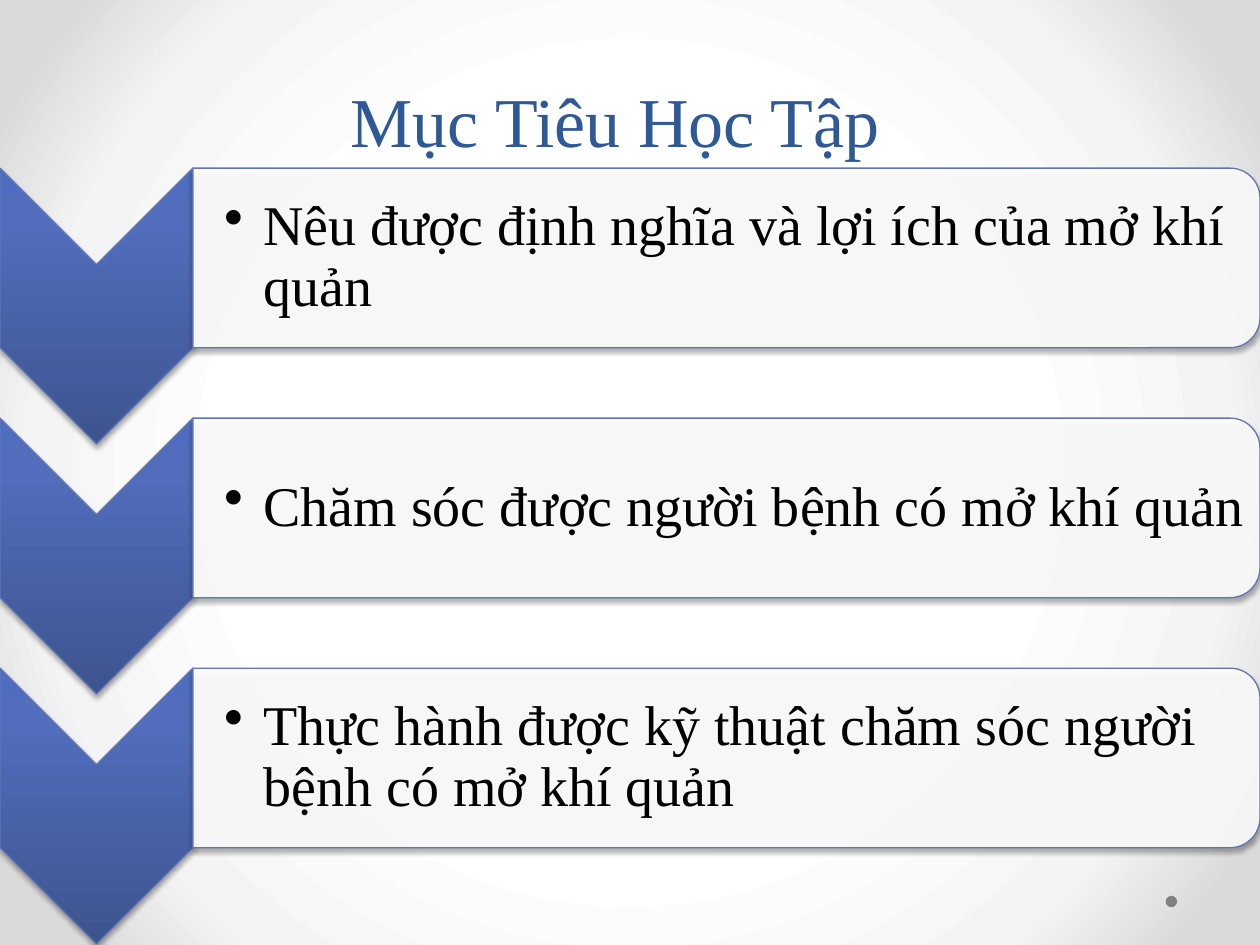
from dataclasses import dataclass
from typing import Any

from lxml.etree import SubElement
from pptx import Presentation
from pptx.dml.color import RGBColor
from pptx.enum.shapes import MSO_SHAPE as Preset
from pptx.enum.text import MSO_ANCHOR as Anchor, MSO_AUTO_SIZE as AutoSize, PP_ALIGN as Align
from pptx.oxml import parse_xml
from pptx.oxml.ns import nsdecls, qn
from pptx.util import Cm, Pt


@dataclass(frozen=True)
class Theme:
    font: str = "Times New Roman"
    title_size: float = 40
    title_leading: float = 58
    body_size: float = 32
    title: str = "2F5897"
    body: str = "000000"
    outline: str = "6076B4"
    panel: str = "FFFFFF"
    dot: str = "808080"
    chevron: tuple = ((0, "3E5490"), (80, "516DBB"), (100, "4F6CBE"))
    backdrop: tuple = ((50, "FFFFFF"), (76, "F4F4F4"), (92, "DADADA"))


@dataclass(frozen=True)
class Box:
    left: float
    top: float
    width: float
    height: float

    def lengths(self) -> tuple:
        return tuple(map(Cm, (self.left, self.top, self.width, self.height)))

    def turned(self) -> "Box":
        shift = (self.width - self.height) / 2
        return Box(self.left + shift, self.top - shift, self.height, self.width)


@dataclass(frozen=True)
class Objective:
    text: str
    top: float


THEME = Theme()
FIRST_TOP, PITCH = 3.39, 5.04
CHEVRON_WIDTH, CHEVRON_HEIGHT = 3.89, 5.56
PANEL_WIDTH, PANEL_HEIGHT = 21.51, 3.62
TEXT_WIDTH, TEXT_HEIGHT = 21.34, 3.28
TEXTS = (
    "Nêu được định nghĩa và lợi ích của mở khí quản",
    "Chăm sóc được người bệnh có mở khí quản",
    "Thực hành được kỹ thuật chăm sóc người bệnh có mở khí quản",
)
LINEAR = '<a:lin ang="16200000" scaled="0"/>'
CIRCLE = '<a:path path="circle"><a:fillToRect l="50000" t="50000" r="50000" b="50000"/></a:path>'


def apply(target: Any, values: dict) -> None:
    for name, value in values.items():
        setattr(target, name, value)


def style_font(paragraph: Any, size: float, color: str) -> None:
    apply(paragraph.font, {"name": THEME.font, "size": Pt(size)})
    paragraph.font.color.rgb = RGBColor.from_string(color)


def set_gradient(properties: Any, stops: tuple, direction: str) -> None:
    stop_list = "".join(
        f'<a:gs pos="{position * 1000}"><a:srgbClr val="{color}"/></a:gs>' for position, color in stops
    )
    gradient = parse_xml(
        f'<a:gradFill {nsdecls("a")} rotWithShape="0"><a:gsLst>{stop_list}</a:gsLst>{direction}</a:gradFill>'
    )
    properties.replace(properties.find(qn("a:solidFill")), gradient)


def add_filled(slide: Any, preset: Preset, box: Box, color: str) -> Any:
    shape = slide.shapes.add_shape(preset, *box.lengths())
    shape.shadow.inherit = False
    shape.fill.solid()
    shape.fill.fore_color.rgb = RGBColor.from_string(color)
    shape.line.fill.background()
    return shape


def add_turned(slide: Any, preset: Preset, box: Box) -> Any:
    shape = add_filled(slide, preset, box.turned(), THEME.panel)
    shape.rotation = 90
    shape.line.color.rgb = RGBColor.from_string(THEME.outline)
    shape.line.width = Pt(0.75)
    effects = shape.element.spPr.find(qn("a:effectLst"))
    effects.append(parse_xml(
        f'<a:outerShdw {nsdecls("a")} blurRad="{Pt(3.1)}" dist="{Pt(1.8)}" dir="5400000" rotWithShape="0">'
        '<a:srgbClr val="000000"><a:alpha val="35000"/></a:srgbClr></a:outerShdw>'
    ))
    return shape


def add_objective(slide: Any, objective: Objective) -> None:
    chevron = add_turned(slide, Preset.CHEVRON, Box(0, objective.top, CHEVRON_WIDTH, CHEVRON_HEIGHT))
    set_gradient(chevron.element.spPr, THEME.chevron, LINEAR)

    panel_box = Box(CHEVRON_WIDTH, objective.top, PANEL_WIDTH, PANEL_HEIGHT)
    panel = add_turned(slide, Preset.ROUND_2_SAME_RECTANGLE, panel_box)
    panel_color = panel.element.spPr.find(qn("a:solidFill"))[0]
    SubElement(panel_color, qn("a:alpha"), val="90000")

    text_top = objective.top + (PANEL_HEIGHT - TEXT_HEIGHT) / 2
    text_box = slide.shapes.add_textbox(*Box(CHEVRON_WIDTH, text_top, TEXT_WIDTH, TEXT_HEIGHT).lengths())
    frame = text_box.text_frame
    apply(frame, {
        "word_wrap": True, "vertical_anchor": Anchor.MIDDLE, "margin_left": Cm(0.63),
        "margin_top": Cm(0.05), "margin_right": Cm(0.05), "margin_bottom": Cm(0.05),
    })
    paragraph = frame.paragraphs[0]
    paragraph.text = objective.text
    properties = paragraph._p.get_or_add_pPr()
    properties.set("marL", str(Cm(0.79)))
    properties.set("indent", str(-Cm(0.79)))
    SubElement(properties, qn("a:buChar"), char="•")
    paragraph.line_spacing = 0.9
    style_font(paragraph, THEME.body_size, THEME.body)


def add_title(slide: Any, text: str) -> None:
    title = slide.shapes.title
    apply(title, dict(zip(("left", "top", "width", "height"), Box(2.34, 0, 20.12, 3.38).lengths())))
    title.text_frame.text = text
    apply(title.text_frame, {
        "word_wrap": True, "auto_size": AutoSize.NONE, "vertical_anchor": Anchor.BOTTOM,
    })
    paragraph = title.text_frame.paragraphs[0]
    apply(paragraph, {"alignment": Align.CENTER, "line_spacing": Pt(THEME.title_leading)})
    style_font(paragraph, THEME.title_size, THEME.title)


def main() -> None:
    """Build the learning objectives slide."""
    presentation = Presentation()
    apply(presentation, {"slide_width": Cm(25.4), "slide_height": Cm(19.05)})
    slide = presentation.slides.add_slide(presentation.slide_layouts[5])
    slide.background.fill.solid()
    set_gradient(slide.element.find(".//" + qn("p:bgPr")), THEME.backdrop, CIRCLE)
    add_filled(slide, Preset.OVAL, Box(23.5, 18.06, 0.23, 0.23), THEME.dot)
    add_title(slide, "Mục Tiêu Học Tập")
    for index, text in enumerate(TEXTS):
        add_objective(slide, Objective(text, FIRST_TOP + index * PITCH))
    presentation.save("out.pptx")


if __name__ == "__main__":
    main()
